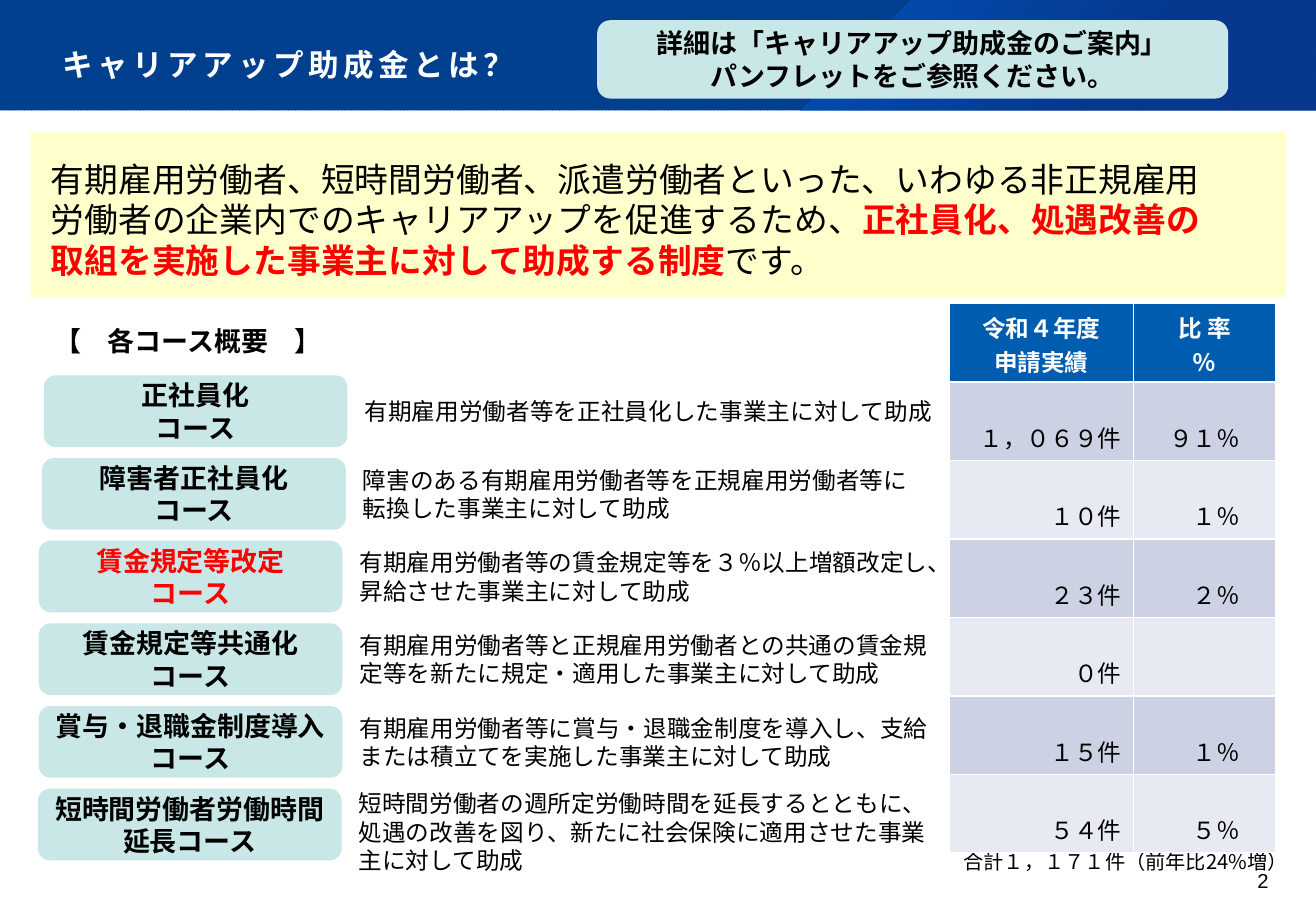
import pptx
import pptx.util
import pptx.dml.color
import pptx.enum.dml
import pptx.enum.shapes
import pptx.enum.text
import pptx.oxml
import pptx.oxml.ns

Pt = pptx.util.Pt
RGB = pptx.dml.color.RGBColor
Kind = pptx.enum.shapes.MSO_SHAPE
Align = pptx.enum.text.PP_ALIGN
Anchor = pptx.enum.text.MSO_ANCHOR

BLACK = RGB(0x00, 0x00, 0x00)
WHITE = RGB(0xFF, 0xFF, 0xFF)
RED = RGB(0xFF, 0x00, 0x00)
NAVY = RGB(0x00, 0x35, 0x79)
BLUE = RGB(0x00, 0x42, 0x92)
HEAD = RGB(0x00, 0x5C, 0xAF)
CREAM = RGB(0xFF, 0xFF, 0xCC)
MINT = RGB(0xC9, 0xE7, 0xE7)
BANDS = [RGB(0xCC, 0xD2, 0xE3), RGB(0xE7, 0xEA, 0xF2)]
NOTO = "Noto Sans CJK JP"

deck = pptx.Presentation()
deck.slide_width, deck.slide_height = Pt(780), Pt(540)
slide = deck.slides.add_slide(deck.slide_layouts[5])
shapes = slide.shapes


def write(frame, *lines, size=14, color=BLACK, bold=False, font=NOTO,
          align=Align.LEFT, anchor=Anchor.MIDDLE):
    """Fill a frame, one paragraph a line; text between bars is red and bold."""
    frame.word_wrap = True
    frame.vertical_anchor = anchor
    for num, line in enumerate(lines):
        para = frame.paragraphs[0] if num == 0 else frame.add_paragraph()
        para.alignment = align
        for part, words in enumerate(line.split("|")):
            run = para.add_run()
            run.text = words
            run.font.size = Pt(size)
            run.font.name = font
            run.font.bold = bold or part % 2 == 1
            run.font.color.rgb = RED if part % 2 else color
            east = pptx.oxml.ns.qn("a:ea")
            run.font._element.makeelement(east)
            mark = pptx.oxml.parse_xml(
                f'<a:ea {pptx.oxml.ns.nsdecls("a")} typeface="{NOTO}"/>')
            run.font._element.append(mark)


def block(kind, left, top, width, height, fill=None):
    """Add a preset shape without line or shadow."""
    shape = shapes.add_shape(kind, Pt(left), Pt(top), Pt(width), Pt(height))
    shape.shadow.inherit = False
    shape.line.fill.background()
    if fill is not None:
        shape.fill.solid()
        shape.fill.fore_color.rgb = fill
    return shape


# Header band
band = block(Kind.RECTANGLE, 0, 0, 780, 65.5)
band.fill.patterned()
band.fill.pattern = pptx.enum.dml.MSO_PATTERN.DARK_UPWARD_DIAGONAL
band.fill.fore_color.rgb = NAVY
band.fill.back_color.rgb = BLUE

# Slanted gradient at the right of the band
draft = shapes.build_freeform(Pt(539.5), Pt(0.5))
draft.add_line_segments([(Pt(x), Pt(y)) for x, y in
                         [(780, 0), (780, 65.5), (474, 65.5)]])
slant = draft.convert_to_shape()
slant.shadow.inherit = False
slant.line.fill.background()
slant.fill.background()
blend = pptx.oxml.parse_xml(
    f'<a:gradFill {pptx.oxml.ns.nsdecls("a")}><a:gsLst>'
    '<a:gs pos="0"><a:srgbClr val="0064DF"><a:alpha val="50000"/></a:srgbClr></a:gs>'
    '<a:gs pos="62000"><a:srgbClr val="0C338E"><a:alpha val="55000"/></a:srgbClr></a:gs>'
    '</a:gsLst><a:path path="circle"><a:fillToRect r="100000" b="100000"/></a:path>'
    '</a:gradFill>')
props = slant._element.spPr
props.replace(props.find(pptx.oxml.ns.qn("a:noFill")), blend)

# Title, brought in front of the band
title = shapes.title
title.left, title.top, title.width, title.height = Pt(-12), Pt(13.5), Pt(378), Pt(46)
shapes._spTree.append(title._element)
frame = title.text_frame
frame.auto_size = pptx.enum.text.MSO_AUTO_SIZE.NONE
frame.margin_left, frame.margin_right = Pt(49), Pt(0)
frame.margin_top, frame.margin_bottom = Pt(0), Pt(10)
write(frame, "キャリアアップ助成金とは？", size=18.1, color=WHITE, bold=True,
      font="Cabin", anchor=Anchor.BOTTOM)
frame.paragraphs[0].line_spacing = 0.9
frame.paragraphs[0].runs[0].font._element.set("spc", "270")

# Pamphlet hint
hint = block(Kind.ROUNDED_RECTANGLE, 354, 12, 374, 46.5, MINT)
write(hint.text_frame, "詳細は「キャリアアップ助成金のご案内」",
      "パンフレットをご参照ください。", size=16, bold=True, align=Align.CENTER)

# Text boxes on the cream panel and around the table
block(Kind.RECTANGLE, 18, 78, 744, 98, CREAM)
notes = [
    (23, 85, 714, 90, "有期雇用労働者、短時間労働者、派遣労働者といった、いわゆる非正規雇用"
     "労働者の企業内でのキャリアアップを促進するため、|正社員化、処遇改善の"
     "取組を実施した事業主に対して助成する制度|です。", dict(size=20)),
    (25, 184.5, 227, 34.5, "【　各コース概要　】", dict(size=16, bold=True)),
    (564, 493.5, 216, 34.5, "合計１，１７１件（前年比24%増）", dict(size=12)),
    (695, 511, 64, 29, "2", dict(size=12, font="Arial", align=Align.RIGHT,
                                 anchor=Anchor.TOP)),
]
for left, top, width, height, words, style in notes:
    box = shapes.add_textbox(Pt(left), Pt(top), Pt(width), Pt(height))
    write(box.text_frame, words, **style)

# Courses: left, text width, text height, name lines, colour, text
courses = [
    (26, 353, 34.5, ("正社員化", "コース"), BLACK,
     "有期雇用労働者等を正社員化した事業主に対して助成"),
    (25, 350, 34.5, ("障害者正社員化", "コース"), BLACK,
     "障害のある有期雇用労働者等を正規雇用労働者等に転換した事業主に対して助成"),
    (23, 352, 34.5, ("賃金規定等改定", "コース"), RED,
     "有期雇用労働者等の賃金規定等を３％以上増額改定し、昇給させた事業主に対して助成"),
    (23, 352, 34.5, ("賃金規定等共通化", "コース"), BLACK,
     "有期雇用労働者等と正規雇用労働者との共通の賃金規定等を新たに規定・適用した事業主に対して助成"),
    (23, 352, 34.5, ("賞与・退職金制度導入", "コース"), BLACK,
     "有期雇用労働者等に賞与・退職金制度を導入し、支給または積立てを実施した事業主に対して助成"),
    (22.5, 352, 43, ("短時間労働者労働時間", "延長コース"), BLACK,
     "短時間労働者の週所定労働時間を延長するとともに、処遇の改善を図り、"
     "新たに社会保険に適用させた事業主に対して助成"),
]
for num, (left, width, height, name, color, words) in enumerate(courses):
    top = 222.5 + 49 * num
    label = block(Kind.ROUNDED_RECTANGLE, left, top, 180, 42.5, MINT)
    label.text_frame.margin_left = label.text_frame.margin_right = Pt(3.6)
    write(label.text_frame, *name, size=16, color=color, bold=True,
          align=Align.CENTER)
    box = shapes.add_textbox(Pt(left + 183), Pt(top + 4), Pt(width), Pt(height))
    write(box.text_frame, words)

# Table of applications
rows = [("１，０６９件", "９１％"), ("１０件", "１％"), ("２３件", "２％"),
        ("０件", ""), ("１５件", "１％"), ("５４件", "５％")]
table = shapes.add_table(7, 2, Pt(562.5), Pt(180), Pt(193.5), Pt(325.5)).table
table.columns[0].width, table.columns[1].width = Pt(109.5), Pt(84)
for row in table.rows:
    row.height = Pt(46.5)
for col, lines in enumerate([("令和４年度", "申請実績"), ("比 率", "％")]):
    cell = table.cell(0, col)
    cell.fill.solid()
    cell.fill.fore_color.rgb = HEAD
    write(cell.text_frame, *lines, color=WHITE, bold=True, font="Cabin",
          align=Align.CENTER)
for num, row in enumerate(rows):
    for col, words in enumerate(row):
        cell = table.cell(num + 1, col)
        cell.fill.solid()
        cell.fill.fore_color.rgb = BANDS[num % 2]
        cell.vertical_anchor = Anchor.BOTTOM
        cell.margin_right = Pt([7.2, 21][col])
        write(cell.text_frame, words, font="Cabin", align=Align.RIGHT)

deck.save("out.pptx")
